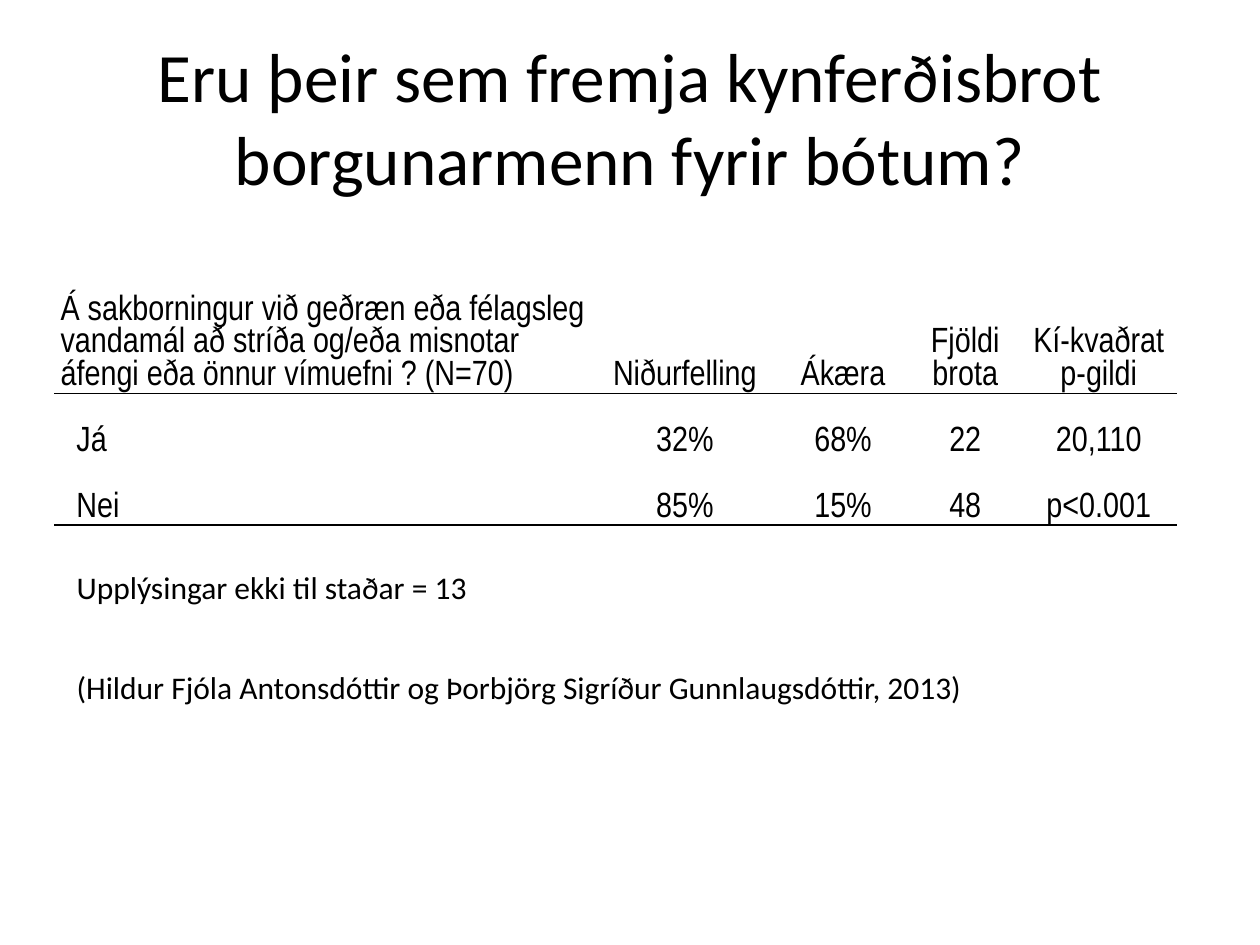
from lxml.etree import SubElement
from pptx import Presentation
from pptx.dml.color import RGBColor
from pptx.enum.text import MSO_ANCHOR, MSO_AUTO_SIZE, PP_ALIGN
from pptx.oxml.ns import qn
from pptx.util import Pt

BLACK = RGBColor(0, 0, 0)
COLUMNS = [308.2, 104.4, 76.3, 63.4, 89.3]
ROW_HEIGHTS = [57, 37.7, 37.7]
ROWS = [
    ["Á sakborningur við geðræn eða félagsleg vandamál að stríða og/eða misnotar "
     "áfengi eða önnur vímuefni ? (N=70)",
     "Niðurfelling", "Ákæra", "Fjöldi brota", "Kí-kvaðrat\np-gildi"],
    ["Já", "32%", "68%", "22", "20,110"],
    ["Nei", "85%", "15%", "48", "p<0.001"],
]


class SlideBuilder:
    """Draws styled elements on one slide, with lengths in points."""

    body_font = "Calibri"
    table_font = "Arial Narrow"
    inset = 3.6
    indent = 9.1

    def __init__(self, slide):
        self.s = slide

    def style(self, tf, font, size, align):
        for p in tf.paragraphs:
            p.alignment = align
            p.font.name = font
            p.font.size = Pt(size)
            p.font.color.rgb = BLACK

    def title(self, text, x, y, w, h):
        sp = self.s.shapes.title
        sp.left, sp.top, sp.width, sp.height = Pt(x), Pt(y), Pt(w), Pt(h)
        tf = sp.text_frame
        tf.text = text
        tf.word_wrap = True
        tf.auto_size = MSO_AUTO_SIZE.NONE
        tf.vertical_anchor = MSO_ANCHOR.MIDDLE
        self.style(tf, self.body_font, 39.6, PP_ALIGN.CENTER)

    def note(self, text, x, y, w, h):
        tf = self.s.shapes.add_textbox(Pt(x), Pt(y), Pt(w), Pt(h)).text_frame
        tf.text = text
        tf.word_wrap = True
        tf.auto_size = MSO_AUTO_SIZE.SHAPE_TO_FIT_TEXT
        self.style(tf, self.body_font, 18, PP_ALIGN.LEFT)

    def borders(self, cell, ruled):
        tcPr = cell._tc.get_or_add_tcPr()
        for side in ("L", "R", "T", "B"):
            ln = SubElement(tcPr, qn(f"a:ln{side}"), w=str(Pt(1)))
            if side in ruled:
                fill = SubElement(ln, qn("a:solidFill"))
                SubElement(fill, qn("a:srgbClr"), val=str(BLACK))
            else:
                SubElement(ln, qn("a:noFill"))

    def cell(self, cell, text, row, col):
        cell.text = text
        cell.vertical_anchor = MSO_ANCHOR.BOTTOM
        cell.margin_left = Pt(self.inset + (self.indent if row and not col else 0))
        cell.margin_right = Pt(self.inset)
        cell.margin_top = cell.margin_bottom = 0
        self.style(cell.text_frame, self.table_font, 20,
                   PP_ALIGN.CENTER if col else PP_ALIGN.LEFT)
        self.borders(cell, ("B", "T", "B")[row])
        cell.fill.background()

    def table(self, rows, x, y, widths, heights):
        table = self.s.shapes.add_table(
            len(rows), len(widths), Pt(x), Pt(y),
            Pt(sum(widths)), Pt(sum(heights))).table
        table.first_row = table.horz_banding = False
        for column, width in zip(table.columns, widths):
            column.width = Pt(width)
        for i, (row, height) in enumerate(zip(rows, heights)):
            table.rows[i].height = Pt(height)
            for j, text in enumerate(row):
                self.cell(table.cell(i, j), text, i, j)


def main():
    prs = Presentation()
    prs.slide_width, prs.slide_height = Pt(720), Pt(540)
    s = SlideBuilder(prs.slides.add_slide(prs.slide_layouts[5]))
    s.title("Eru þeir sem fremja kynferðisbrot borgunarmenn fyrir bótum?",
            36, 21.6, 648, 90)
    s.table(ROWS, 31, 167.8, COLUMNS, ROW_HEIGHTS)
    s.note("(Hildur Fjóla Antonsdóttir og Þorbjörg Sigríður Gunnlaugsdóttir, 2013)",
           36.7, 378, 601.2, 29)
    s.note("Upplýsingar ekki til staðar = 13", 36.7, 321.1, 629.3, 29)
    prs.save("out.pptx")


if __name__ == "__main__":
    main()
